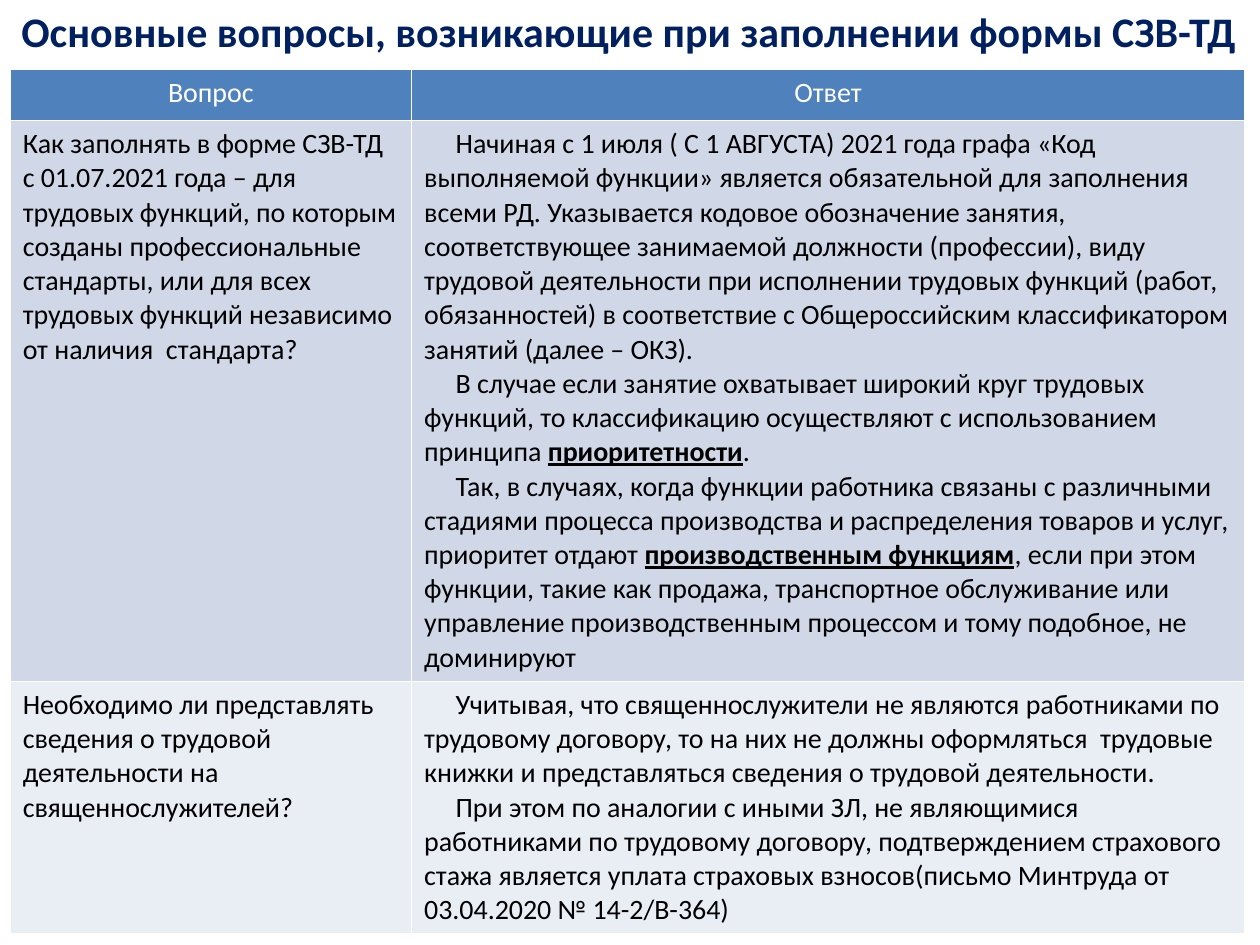
from lxml import etree
from pptx import Presentation
from pptx.dml.color import RGBColor
from pptx.enum import text
from pptx.oxml.ns import qn
from pptx.util import Pt

WHITE, BLACK, NAVY = "FFFFFF", "000000", "002060"
ROW_FILLS = ["4F81BD", "D0D8E8", "E9EDF4"]
HEADINGS = ["Вопрос", "Ответ"]

# Each paragraph is a list of plain strings and (emphasised,) tuples.
QUESTIONS = [
    "Как заполнять в форме СЗВ-ТД с 01.07.2021 года – для трудовых функций, "
    "по которым созданы профессиональные стандарты, или для всех трудовых "
    "функций независимо от наличия  стандарта?",
    "Необходимо ли представлять сведения о трудовой деятельности на "
    "священнослужителей?",
]
ANSWERS = [
    [
        ["Начиная с 1 июля ( С 1 АВГУСТА) 2021 года графа «Код выполняемой "
         "функции» является обязательной для заполнения всеми РД. Указывается "
         "кодовое обозначение занятия, соответствующее занимаемой должности "
         "(профессии), виду трудовой деятельности при исполнении трудовых "
         "функций (работ, обязанностей) в соответствие с Общероссийским "
         "классификатором занятий (далее – ОКЗ)."],
        ["В случае если занятие охватывает широкий круг трудовых функций, то "
         "классификацию осуществляют с использованием принципа ",
         ("приоритетности",), "."],
        ["Так, в случаях, когда функции работника связаны с различными "
         "стадиями процесса производства и распределения товаров и услуг, "
         "приоритет отдают ", ("производственным функциям",),
         ", если при этом функции, такие как продажа, транспортное "
         "обслуживание или управление производственным процессом и тому "
         "подобное, не доминируют"],
    ],
    [
        ["Учитывая, что священнослужители не являются работниками по трудовому "
         "договору, то на них не должны оформляться  трудовые книжки и "
         "представляться сведения о трудовой деятельности."],
        ["При этом по аналогии с иными ЗЛ, не являющимися работниками по "
         "трудовому договору, подтверждением страхового стажа является уплата "
         "страховых взносов(письмо Минтруда от 03.04.2020 № 14-2/В-364)"],
    ],
]


def rgb(code):
    return RGBColor.from_string(code)


def write(cell, paragraphs, size=16, color=BLACK, bold=False,
          align=text.PP_ALIGN.LEFT, indent=0):
    """Fill a cell; tuples inside a paragraph become bold and underlined."""
    frame = cell.text_frame
    for index, parts in enumerate(paragraphs):
        paragraph = frame.add_paragraph() if index else frame.paragraphs[0]
        paragraph.alignment = align
        if indent:
            paragraph._p.get_or_add_pPr().set("indent", str(Pt(indent)))
        for part in parts:
            strong = isinstance(part, tuple)
            run = paragraph.add_run()
            run.text = part[0] if strong else part
            run.font.name = "Calibri"
            run.font.size = Pt(size)
            run.font.color.rgb = rgb(color)
            run.font.bold = bold or strong
            run.font.underline = strong


def set_borders(cell, color=None):
    """Draw 1 pt borders in the colour, or switch them off without one."""
    properties = cell._tc.get_or_add_tcPr()
    for side in "LRTB":
        line = etree.SubElement(properties, qn(f"a:ln{side}"), w=str(Pt(1)))
        if color:
            fill = etree.SubElement(line, qn("a:solidFill"))
            etree.SubElement(fill, qn("a:srgbClr"), val=color)
        else:
            etree.SubElement(line, qn("a:noFill"))


def add_table(slide, left, top, widths, heights):
    table = slide.shapes.add_table(
        len(heights), len(widths), Pt(left), Pt(top),
        Pt(sum(widths)), Pt(sum(heights))).table
    table.first_row = table.horz_banding = False
    for column, width in zip(table.columns, widths):
        column.width = Pt(width)
    for row, height in zip(table.rows, heights):
        row.height = Pt(height)
    return table


def add_questions(slide):
    table = add_table(slide, 5.8, 39.8, [229.4, 476], [29.2, 320.4, 144])
    for row, color in zip(table.rows, ROW_FILLS):
        for cell in row.cells:
            set_borders(cell, WHITE)
            cell.fill.solid()
            cell.fill.fore_color.rgb = rgb(color)
    for column, heading in enumerate(HEADINGS):
        write(table.cell(0, column), [[heading]], color=WHITE,
              align=text.PP_ALIGN.CENTER)
    for row, (question, answer) in enumerate(zip(QUESTIONS, ANSWERS), 1):
        write(table.cell(row, 0), [[question]])
        write(table.cell(row, 1), answer, indent=18)


def add_title(slide):
    cell = add_table(slide, 3.6, 0.7, [711.4], [51.1]).cell(0, 0)
    set_borders(cell)
    cell.fill.background()
    write(cell, [["Основные вопросы, возникающие при заполнении формы СЗВ-ТД"]],
          size=24, color=NAVY, bold=True, align=text.PP_ALIGN.CENTER)


def main():
    deck = Presentation()
    deck.slide_width, deck.slide_height = Pt(720), Pt(540)
    slide = deck.slides.add_slide(deck.slide_layouts[6])
    add_questions(slide)
    add_title(slide)
    deck.save("out.pptx")


if __name__ == "__main__":
    main()
